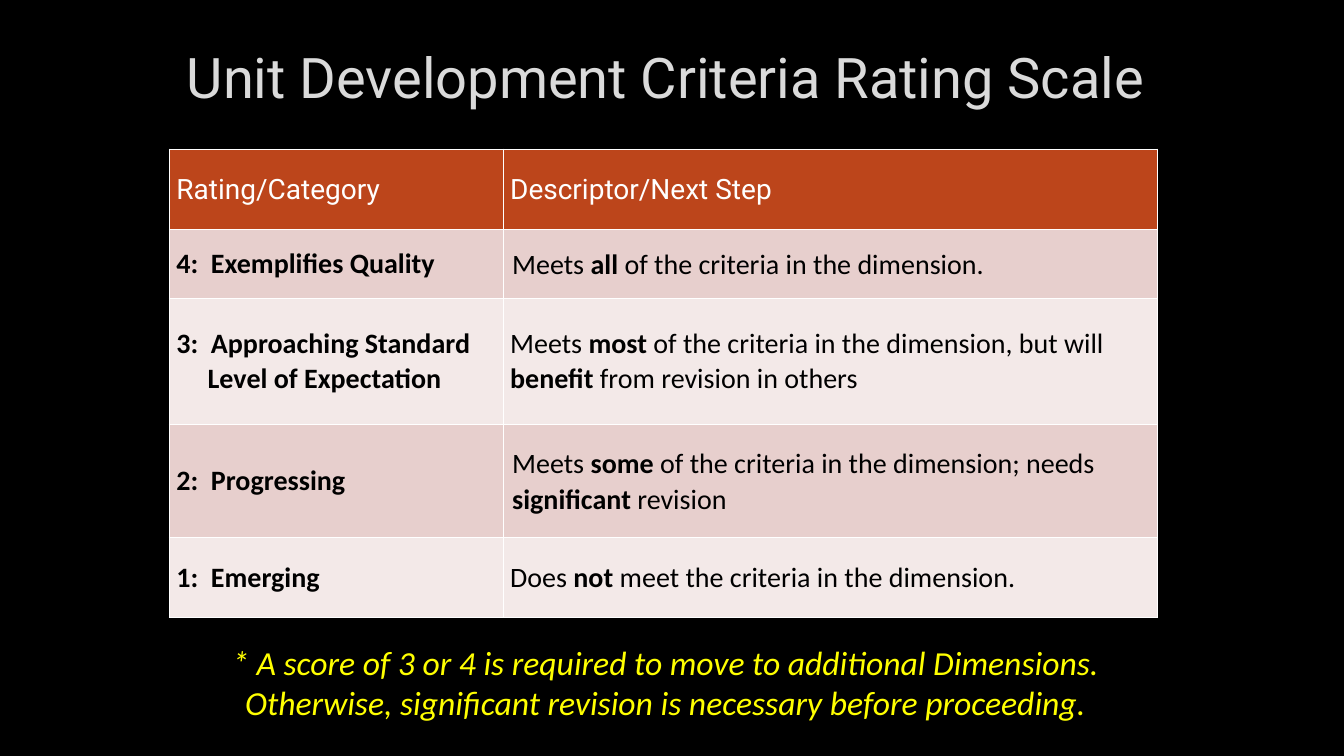
from lxml import etree
from pptx import Presentation
from pptx.dml.color import RGBColor
from pptx.enum import text as t
from pptx.oxml.ns import qn
from pptx.util import Inches, Pt

BLACK = RGBColor(0x00, 0x00, 0x00)
WHITE = RGBColor(0xFF, 0xFF, 0xFF)
GRAY = RGBColor(0xDA, 0xDA, 0xDA)
YELLOW = RGBColor(0xFF, 0xFF, 0x00)
RUST = RGBColor(0xBC, 0x45, 0x1B)
BANDS = [RGBColor(0xE7, 0xCF, 0xCD), RGBColor(0xF3, 0xE9, 0xE8)]

TITLE = "Unit Development Criteria Rating Scale"
NOTE = ("* A score of 3 or 4 is required to move to additional Dimensions. "
        "Otherwise, significant revision is necessary before proceeding.")
HEADINGS = ["Rating/Category", "Descriptor/Next Step"]
# Rating lines, then descriptor pieces that alternate regular and bold
RATINGS = [
    (["4:  Exemplifies Quality"],
     ["Meets ", "all", " of the criteria in the dimension."]),
    (["3:  Approaching Standard", "Level of Expectation"],
     ["Meets ", "most", " of the criteria in the dimension, but will ",
      "benefit ", "from revision in others"]),
    (["2:  Progressing"],
     ["Meets ", "some", " of the criteria in the dimension; needs ",
      "significant ", "revision"]),
    (["1:  Emerging"],
     ["Does ", "not ", "meet the criteria in the dimension."]),
]
COL_WIDTHS = [3.31, 6.49]
ROW_HEIGHTS = [0.8, 0.68, 1.25, 1.12, 0.8]
SECOND_LINE_INDENT = 0.31
MARGINS = dict(margin_left=0.07, margin_right=0.07, margin_top=0.04, margin_bottom=0.04)
LOOSE_MARGINS = dict(margin_left=0.09, margin_right=0.09, margin_top=0, margin_bottom=0)

HEADING_FONT = dict(name="Roboto", size=Pt(20), bold=False)
BODY_FONT = dict(name="Calibri", size=Pt(20))
NOTE_FONT = dict(name="Calibri", size=Pt(24), italic=True)
TITLE_FONT = dict(name="Roboto", size=Pt(40))


def add_run(p, words, color, font):
    r = p.add_run()
    r.text = words
    r.font.color.rgb = color
    for key, value in font.items():
        setattr(r.font, key, value)


def format_cell(cell, fill, margins):
    """Set fill, margins, middle anchor and thin white borders."""
    cell.vertical_anchor = t.MSO_ANCHOR.MIDDLE
    for key, value in margins.items():
        setattr(cell, key, Inches(value))
    tcPr = cell._tc.get_or_add_tcPr()
    for side in ("lnL", "lnR", "lnT", "lnB"):
        ln = etree.SubElement(tcPr, qn("a:" + side), w=str(Pt(1)))
        solid = etree.SubElement(ln, qn("a:solidFill"))
        etree.SubElement(solid, qn("a:srgbClr"), val=str(WHITE))
    cell.fill.solid()
    cell.fill.fore_color.rgb = fill


def add_rating_table(slide):
    frame = slide.shapes.add_table(
        len(ROW_HEIGHTS), len(COL_WIDTHS), Inches(1.68), Inches(1.48),
        Inches(sum(COL_WIDTHS)), Inches(sum(ROW_HEIGHTS)))
    table = frame.table
    for col, width in zip(table.columns, COL_WIDTHS):
        col.width = Inches(width)
    for row, height in zip(table.rows, ROW_HEIGHTS):
        row.height = Inches(height)

    for c, heading in enumerate(HEADINGS):
        cell = table.cell(0, c)
        format_cell(cell, RUST, MARGINS)
        add_run(cell.text_frame.paragraphs[0], heading, WHITE, HEADING_FONT)

    for i, (lines, pieces) in enumerate(RATINGS):
        rating, descriptor = table.cell(i + 1, 0), table.cell(i + 1, 1)
        loose = i % 2 == 0
        format_cell(rating, BANDS[i % 2], MARGINS)
        format_cell(descriptor, BANDS[i % 2], LOOSE_MARGINS if loose else MARGINS)
        tf = rating.text_frame
        for n, line in enumerate(lines):
            p = tf.add_paragraph() if n else tf.paragraphs[0]
            if n:
                p._p.get_or_add_pPr().set("marL", str(Inches(SECOND_LINE_INDENT)))
            add_run(p, line, BLACK, dict(BODY_FONT, bold=True))
        p = descriptor.text_frame.paragraphs[0]
        if loose:
            p.line_spacing = 1.07
        for n, piece in enumerate(pieces):
            add_run(p, piece, BLACK, dict(BODY_FONT, bold=n % 2 == 1))


def fill_centered(sp, words, color, font):
    tf = sp.text_frame
    tf.word_wrap = True
    p = tf.paragraphs[0]
    p.alignment = t.PP_ALIGN.CENTER
    add_run(p, words, color, font)
    return tf


def main():
    prs = Presentation()
    prs.slide_width, prs.slide_height = Inches(13.33), Inches(7.5)
    slide = prs.slides.add_slide(prs.slide_layouts[5])
    slide.background.fill.solid()
    slide.background.fill.fore_color.rgb = BLACK

    title = slide.shapes.title
    title.left, title.top = Inches(0.94), Inches(0.23)
    title.width, title.height = Inches(11.32), Inches(1.06)
    tf = fill_centered(title, TITLE, GRAY, TITLE_FONT)
    tf.vertical_anchor = t.MSO_ANCHOR.MIDDLE

    add_rating_table(slide)

    note = slide.shapes.add_textbox(Inches(1.68), Inches(6.32), Inches(9.84), Inches(0.91))
    fill_centered(note, NOTE, YELLOW, NOTE_FONT)
    prs.save("out.pptx")


if __name__ == "__main__":
    main()
